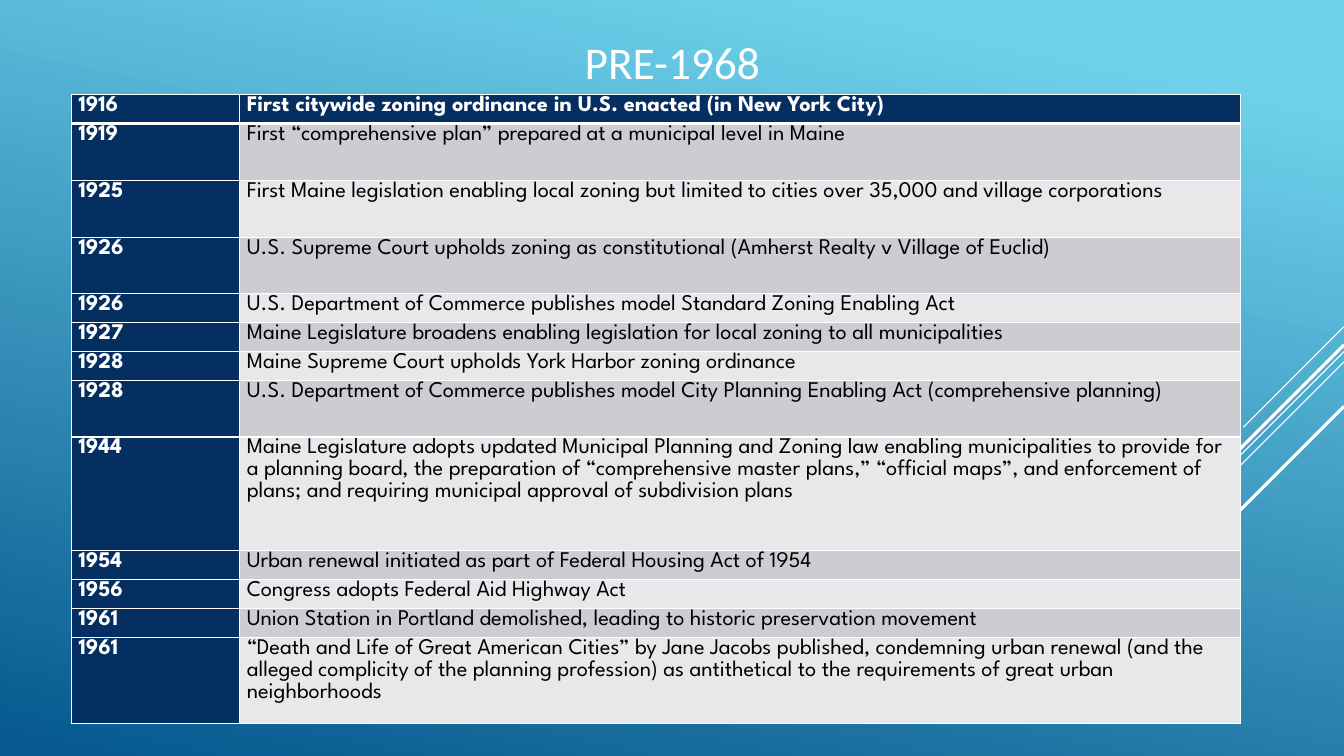
import pptx
import pptx.dml.color
import pptx.enum.shapes
import pptx.enum.text
import pptx.oxml
import pptx.oxml.ns
import pptx.util
from pptx.dml.color import RGBColor
from pptx.util import Cm

WHITE = RGBColor(0xFF, 0xFF, 0xFF)
BLACK = RGBColor(0x00, 0x00, 0x00)
NAVY = RGBColor(0x05, 0x2F, 0x61)
DARK_BAND = RGBColor(0xCC, 0xCD, 0xD2)
LIGHT_BAND = RGBColor(0xE7, 0xE8, 0xEA)
SKY = RGBColor(0x6E, 0xD2, 0xEB)
OCEAN = RGBColor(0x06, 0x58, 0x8E)

PAGE_WIDTH, PAGE_HEIGHT = Cm(33.87), Cm(19.05)

# Row heights
SINGLE, DOUBLE, TRIPLE, QUADRUPLE = Cm(0.69), Cm(1.43), Cm(2.16), Cm(2.87)

EVENTS = [
    ("1916", "First citywide zoning ordinance in U.S. enacted (in New York City)", SINGLE),
    ("1919", "First “comprehensive plan” prepared at a municipal level in Maine", DOUBLE),
    ("1925", "First Maine legislation enabling local zoning but limited to cities over 35,000 "
             "and village corporations", DOUBLE),
    ("1926", "U.S. Supreme Court upholds zoning as constitutional "
             "(Amherst Realty v Village of Euclid)", DOUBLE),
    ("1926", "U.S. Department of Commerce publishes model Standard Zoning Enabling Act", SINGLE),
    ("1927", "Maine Legislature broadens enabling legislation for local zoning "
             "to all municipalities", SINGLE),
    ("1928", "Maine Supreme Court upholds York Harbor zoning ordinance", SINGLE),
    ("1928", "U.S. Department of Commerce publishes model City Planning Enabling Act "
             "(comprehensive planning)", DOUBLE),
    ("1944", "Maine Legislature adopts updated Municipal Planning and Zoning law enabling "
             "municipalities to provide for a planning board, the preparation of "
             "“comprehensive master plans,” “official maps”, and enforcement of plans; "
             "and requiring municipal approval of subdivision plans", QUADRUPLE),
    ("1954", "Urban renewal initiated as part of Federal Housing Act of 1954", SINGLE),
    ("1956", "Congress adopts Federal Aid Highway Act", SINGLE),
    ("1961", "Union Station in Portland demolished, leading to historic preservation movement",
     SINGLE),
    ("1961", "“Death and Life of Great American Cities” by Jane Jacobs published, condemning "
             "urban renewal (and the alleged complicity of the planning profession) as "
             "antithetical to the requirements of great urban neighborhoods", TRIPLE),
]

# Diagonal rays: top on the right edge, extent in both directions (cm), weight (pt)
RAYS = [(8.23, 2.54, 0.75), (8.86, 8.28, 0.75), (9.12, 5.26, 0.75),
        (8.69, 4.85, 2.25), (10.24, 3.53, 2.25)]


def paint_background(page):
    fill = page.background.fill
    fill.gradient()
    fill.gradient_angle = 258
    for stop, color, position in zip(fill.gradient_stops, (SKY, OCEAN), (0.1, 1)):
        stop.color.rgb = color
        stop.position = position


def draw_rays(page, right):
    for top, extent, weight in RAYS:
        ray = page.shapes.add_connector(
            pptx.enum.shapes.MSO_CONNECTOR.STRAIGHT,
            right, Cm(top), right - Cm(extent), Cm(top + extent))
        ray.line.color.rgb = WHITE
        ray.line.width = pptx.util.Pt(weight)
        properties = ray._element.spPr
        properties.append(properties.makeelement(pptx.oxml.ns.qn("a:effectLst"), {}))


def add_title(page, left, top, width, height):
    box = page.shapes.add_textbox(left, top, width, height)
    frame = box.text_frame
    frame.word_wrap = True
    frame.vertical_anchor = pptx.enum.text.MSO_ANCHOR.MIDDLE
    para = frame.paragraphs[0]
    para.text = "PRE-1968"
    para.alignment = pptx.enum.text.PP_ALIGN.CENTER
    para.font.name = "Calibri"
    para.font.size = pptx.util.Pt(32.4)
    para.font.color.rgb = WHITE


def set_borders(cell, weights):
    """Give the left, right, top and bottom borders their weights in points."""
    properties = cell._tc.get_or_add_tcPr()
    for index, (side, weight) in enumerate(zip("LRTB", weights)):
        border = pptx.oxml.parse_xml(
            f'<a:ln{side} {pptx.oxml.ns.nsdecls("a")} w="{pptx.util.Pt(weight)}">'
            f'<a:solidFill><a:srgbClr val="{WHITE}"/></a:solidFill></a:ln{side}>')
        properties.insert(index, border)


def fill_cell(cell, text, fill, ink, bold, borders):
    cell.margin_left = cell.margin_right = Cm(0.18)
    cell.margin_top = cell.margin_bottom = 0
    cell.fill.solid()
    cell.fill.fore_color.rgb = fill
    set_borders(cell, borders)
    para = cell.text_frame.paragraphs[0]
    para.text = text
    para.line_spacing = 1.07
    para.font.name = "League Spartan"
    para.font.size = pptx.util.Pt(16)
    para.font.bold = bold
    para.font.color.rgb = ink


def add_timeline(page, left, top, width):
    height = sum(event[2] for event in EVENTS)
    table = page.shapes.add_table(len(EVENTS), 2, left, top, width, height).table
    table.columns[0].width = Cm(4.24)
    table.columns[1].width = width - Cm(4.24)
    for index, (year, event, row_height) in enumerate(EVENTS):
        table.rows[index].height = row_height
        header = index == 0
        # A heavier rule runs between the first row and the second
        borders = (1, 1, 3 if index == 1 else 1, 3 if header else 1)
        band = DARK_BAND if index % 2 else LIGHT_BAND
        fill_cell(table.cell(index, 0), year, NAVY, WHITE, True, borders)
        fill_cell(table.cell(index, 1), event, NAVY if header else band,
                  WHITE if header else BLACK, header, borders)


def main():
    deck = pptx.Presentation()
    deck.slide_width, deck.slide_height = PAGE_WIDTH, PAGE_HEIGHT
    page = deck.slides.add_slide(deck.slide_layouts[6])
    paint_background(page)
    draw_rays(page, PAGE_WIDTH)
    add_title(page, Cm(2.34), Cm(1.02), Cm(29.21), Cm(1.04))
    add_timeline(page, Cm(1.8), Cm(2.39), Cm(29.46))
    deck.save("out.pptx")


if __name__ == "__main__":
    main()
